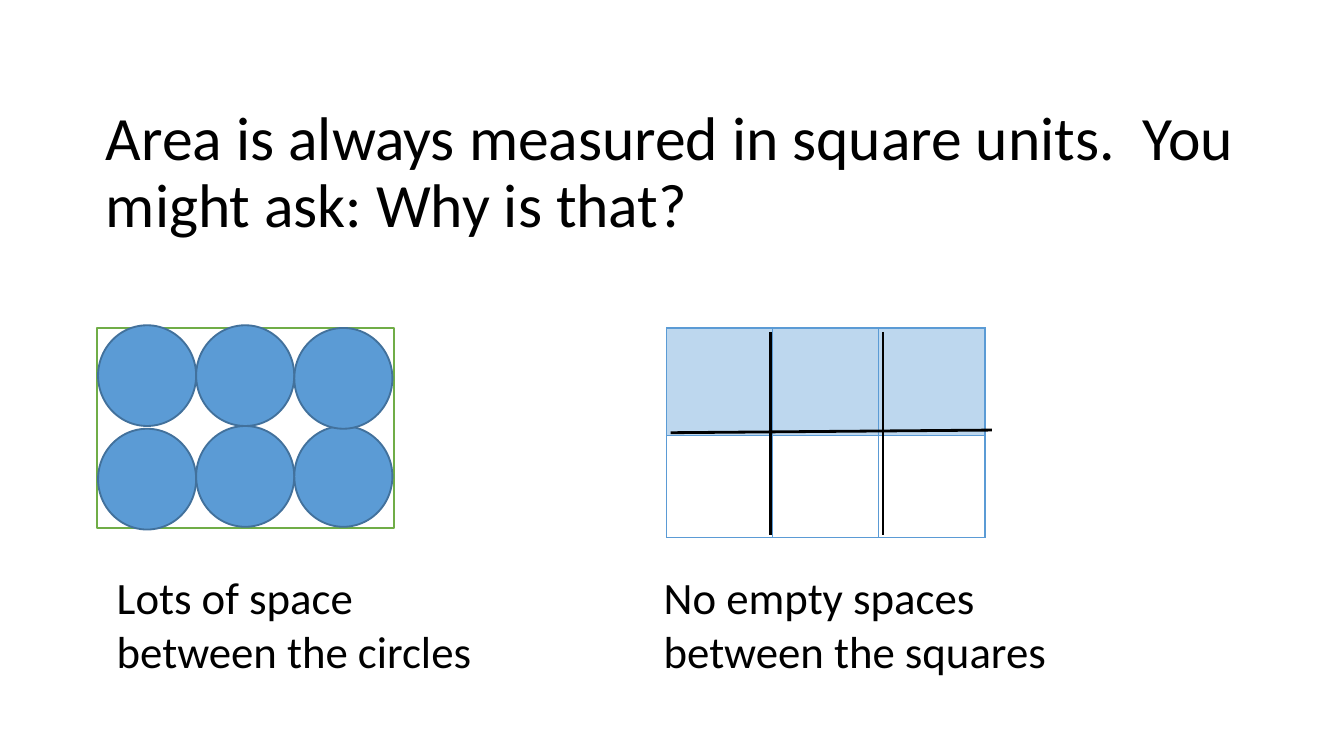
"""Build a slide on why area is measured in square units."""
from itertools import product

from lxml.etree import SubElement
from pptx import Presentation
from pptx.dml.color import RGBColor
from pptx.enum.shapes import MSO_CONNECTOR, MSO_SHAPE
from pptx.enum.text import MSO_ANCHOR
from pptx.oxml.ns import qn
from pptx.util import Inches, Pt

BLACK = RGBColor(0, 0, 0)
WHITE = RGBColor(0xFF, 0xFF, 0xFF)
BLUE = RGBColor(0x5B, 0x9B, 0xD5)
DARK_BLUE = RGBColor(0x42, 0x71, 0x9C)
GREEN = RGBColor(0x70, 0xAD, 0x47)

TITLE = "Area is always measured in square units.  You might ask: Why is that?"
CAPTIONS = [
    ("Lots of space between the circles", 0.77, 2.95, 1.44),
    ("No empty spaces between the squares", 4.84, 3.46, 1.11),
]
FRAME = (0.72, 2.44, 2.21, 1.49)
CIRCLE_LEFT, CIRCLE_W, CIRCLE_H = 0.73, 0.73, 0.75
CIRCLE_TOPS = [(2.42, 3.19), (2.42, 3.17), (3.17, 2.44)]
GRID_LEFT, GRID_TOP, CELL_W = 4.96, 2.44, 0.79
ROW_HEIGHTS = [0.8, 0.76]
ROW_TINTED = [True, False]
TINT_ALPHA = 40000
DIVIDERS = [(x, 2.47, x, 3.98) for x in (5.73, 6.57)] + [(4.99, 3.22, 7.38, 3.2)]


def add_text(s, text, box, size, anchor=MSO_ANCHOR.TOP, spacing=1.0):
    tf = s.shapes.add_textbox(*map(Inches, box)).text_frame
    tf.word_wrap = True
    tf.vertical_anchor = anchor
    p = tf.paragraphs[0]
    p.text = text
    p.line_spacing = spacing
    p.font.name = "Calibri"
    p.font.size = Pt(size)
    p.font.color.rgb = BLACK


def add_outlined(s, kind, box, fill, line):
    sp = s.shapes.add_shape(kind, *map(Inches, box))
    sp.shadow.inherit = False
    sp.fill.solid()
    sp.fill.fore_color.rgb = fill
    sp.line.color.rgb = line
    sp.line.width = Pt(1)


def style_cell(cell, tinted):
    tc_pr = cell._tc.get_or_add_tcPr()
    for side in ("a:lnL", "a:lnR", "a:lnT", "a:lnB"):
        ln = SubElement(tc_pr, qn(side), w=str(Pt(0.75)))
        SubElement(SubElement(ln, qn("a:solidFill")), qn("a:srgbClr"), val=str(BLUE))
    if tinted:
        fill = SubElement(tc_pr, qn("a:solidFill"))
        color = SubElement(fill, qn("a:srgbClr"), val=str(BLUE))
        SubElement(color, qn("a:alpha"), val=str(TINT_ALPHA))
    else:
        cell.fill.background()


def add_squares(s, cols=3):
    rows = len(ROW_HEIGHTS)
    box = (GRID_LEFT, GRID_TOP, cols * CELL_W, sum(ROW_HEIGHTS))
    table = s.shapes.add_table(rows, cols, *map(Inches, box)).table
    table.first_row = table.horz_banding = False
    for row, height in zip(table.rows, ROW_HEIGHTS):
        row.height = Inches(height)
    for r, c in product(range(rows), range(cols)):
        style_cell(table.cell(r, c), ROW_TINTED[r])


def add_divider(s, ends):
    line = s.shapes.add_connector(MSO_CONNECTOR.STRAIGHT, *map(Inches, ends))
    line.line.color.rgb = BLACK
    line.line.width = Pt(1.5)
    SubElement(line._element.spPr, qn("a:effectLst"))


def main():
    prs = Presentation()
    prs.slide_width = Inches(10)
    prs.slide_height = prs.slide_width * 9 // 16
    s = prs.slides.add_slide(prs.slide_layouts[6])
    add_outlined(s, MSO_SHAPE.RECTANGLE, FRAME, WHITE, GREEN)
    add_text(s, TITLE, (0.69, 0.14, 8.62, 2.31), 33, MSO_ANCHOR.MIDDLE, 0.9)
    for text, left, width, height in CAPTIONS:
        add_text(s, text, (left, 4.19, width, height), 24)
    add_squares(s)
    for ends in DIVIDERS:
        add_divider(s, ends)
    for col, tops in enumerate(CIRCLE_TOPS):
        for top in tops:
            box = (CIRCLE_LEFT + col * CIRCLE_W, top, CIRCLE_W, CIRCLE_H)
            add_outlined(s, MSO_SHAPE.OVAL, box, BLUE, DARK_BLUE)
    prs.save("out.pptx")


if __name__ == "__main__":
    main()
